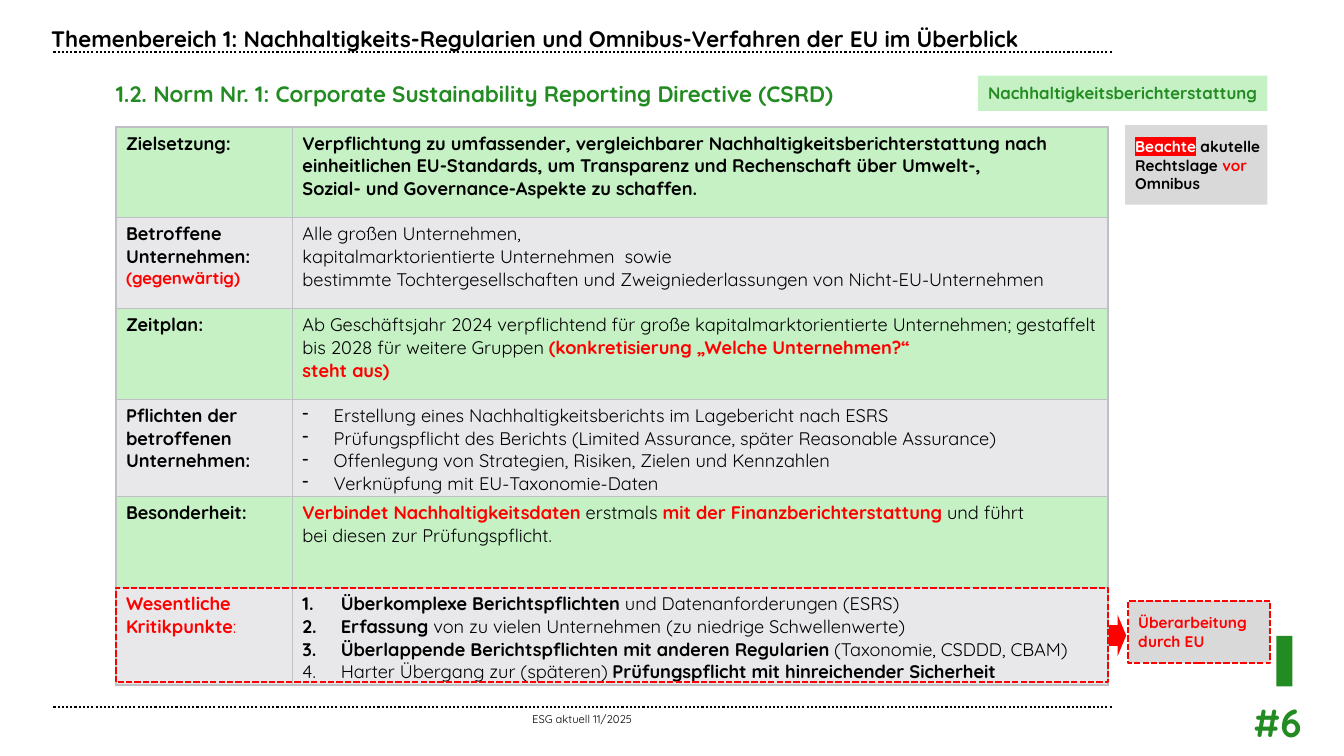
from copy import deepcopy

from lxml import etree
from pptx import Presentation
from pptx import util as u
from pptx.dml.color import RGBColor
from pptx.enum import dml, shapes, text
from pptx.oxml import ns

FONT = "Quicksand"
BLACK, WHITE, RED, GREEN = "000000", "FFFFFF", "FF0000", "228B22"
MINT, PALE, GREY, BORDER = "C5F1C5", "E8E8EA", "D9D9D9", "BFC0C5"
DOTTED, DASHED = dml.MSO_LINE.ROUND_DOT, dml.MSO_LINE.SQUARE_DOT
MIDDLE, LEFT = text.MSO_ANCHOR.MIDDLE, text.PP_ALIGN.LEFT
CENTER, RIGHT = text.PP_ALIGN.CENTER, text.PP_ALIGN.RIGHT


def rgb(value):
    return RGBColor.from_string(value)


def child(parent, tag, **attributes):
    return etree.SubElement(parent, ns.qn(tag), **attributes)


def plain(words, color=BLACK, **style):
    return words, dict(color=color, **style)


def bold(words, color=BLACK, **style):
    return words, dict(color=color, bold=True, **style)


class SlideBuilder:
    def __init__(self, page):
        self.page = page

    def add_span(self, para, words, size, color, bold=False, highlight=None):
        for index, line in enumerate(words.split("\n")):
            if index:
                para.add_line_break()
                para._p[-1].append(deepcopy(span._r.rPr))
            if not line:
                continue
            span = para.add_run()
            span.text = line
            span.font.name = FONT
            span.font.size = u.Pt(size)
            span.font.bold = bold
            span.font.color.rgb = rgb(color)
            if highlight:
                mark = etree.Element(ns.qn("a:highlight"))
                child(mark, "a:srgbClr", val=highlight)
                span._r.rPr.find(ns.qn("a:solidFill")).addnext(mark)

    def add_paragraphs(self, frame, paragraphs, size, align=LEFT, bullet=None, indent=0):
        frame.word_wrap = True
        for index, spans in enumerate(paragraphs):
            para = frame.add_paragraph() if index else frame.paragraphs[0]
            para.alignment = align
            if bullet:
                properties = para._p.get_or_add_pPr()
                properties.set("marL", str(u.Inches(indent)))
                properties.set("indent", str(u.Inches(-indent)))
                if bullet == "-":
                    child(properties, "a:buChar", char=bullet)
                else:
                    child(properties, "a:buAutoNum", type=bullet)
            for words, style in spans:
                self.add_span(para, words, **{"size": size, **style})

    def fit_frame(self, frame, anchor, insets):
        frame.vertical_anchor = anchor
        left, top, right, bottom = map(u.Inches, insets)
        frame.margin_left, frame.margin_top = left, top
        frame.margin_right, frame.margin_bottom = right, bottom

    def label(self, place, spans, size, align=LEFT,
              anchor=text.MSO_ANCHOR.TOP, insets=(0.1, 0.05, 0.1, 0.05)):
        box = self.page.shapes.add_textbox(*map(u.Inches, place))
        self.fit_frame(box.text_frame, anchor, insets)
        self.add_paragraphs(box.text_frame, [spans], size, align)

    def shape(self, place, fill=None, line=None, spans=(), size=11, align=LEFT,
              kind=shapes.MSO_SHAPE.RECTANGLE, insets=(0.1, 0.05, 0.1, 0.05)):
        box = self.page.shapes.add_shape(kind, *map(u.Inches, place))
        box.shadow.inherit = False
        if fill:
            box.fill.solid()
            box.fill.fore_color.rgb = rgb(fill)
        else:
            box.fill.background()
        if line:
            self.stroke(box.line, line, DASHED)
        else:
            box.line.fill.background()
        if spans:
            self.fit_frame(box.text_frame, MIDDLE, insets)
            self.add_paragraphs(box.text_frame, [spans], size, align)

    def stroke(self, line, color, dash):
        line.color.rgb = rgb(color)
        line.width = u.Pt(1.5)
        line.dash_style = dash

    def rule(self, left, right, top):
        ends = map(u.Inches, (left, top, right, top))
        rule = self.page.shapes.add_connector(shapes.MSO_CONNECTOR.STRAIGHT, *ends)
        self.stroke(rule.line, BLACK, DOTTED)
        child(rule._element.spPr, "a:effectLst")

    def cell(self, cell, fill, paragraphs, **layout):
        cell.fill.solid()
        cell.fill.fore_color.rgb = rgb(fill)
        for index, side in enumerate(("a:lnL", "a:lnR", "a:lnT", "a:lnB")):
            edge = etree.Element(ns.qn(side), w=str(u.Pt(1)))
            child(child(edge, "a:solidFill"), "a:srgbClr", val=BORDER)
            cell._tc.get_or_add_tcPr().insert(index, edge)
        self.add_paragraphs(cell.text_frame, paragraphs, 13, **layout)

    def table(self, place, widths, rows):
        grid = self.page.shapes.add_table(
            len(rows), len(widths), *map(u.Inches, place)).table
        grid.first_row = grid.horz_banding = False
        for column, width in zip(grid.columns, widths):
            column.width = u.Inches(width)
        for index, (heading, paragraphs, layout) in enumerate(rows):
            grid.rows[index].height = u.Inches(0.9)
            fill = PALE if index % 2 else MINT
            self.cell(grid.cell(index, 0), fill, [heading])
            self.cell(grid.cell(index, 1), fill, paragraphs, **layout)


ROWS = [
    ([bold("Zielsetzung:")],
     [[bold("Verpflichtung zu umfassender, vergleichbarer Nachhaltigkeitsberichterstattung "
            "nach einheitlichen EU-Standards, um Transparenz und Rechenschaft über Umwelt-, \n"
            "Sozial- und Governance-Aspekte zu schaffen.")]], {}),
    ([bold("Betroffene Unternehmen:\n"), bold("(gegenwärtig)", RED, size=12)],
     [[plain("Alle großen Unternehmen,")],
      [plain("kapitalmarktorientierte Unternehmen  sowie")],
      [plain("bestimmte Tochtergesellschaften und Zweigniederlassungen "
             "von Nicht-EU-Unternehmen")]], {}),
    ([bold("Zeitplan:")],
     [[plain("Ab Geschäftsjahr 2024 verpflichtend für große kapitalmarktorientierte "
             "Unternehmen; gestaffelt bis 2028 für weitere Gruppen"),
       bold(" (konkretisierung „Welche Unternehmen?“ \nsteht aus)", RED)]], {}),
    ([bold("Pflichten der betroffenen Unternehmen:")],
     [[plain("Erstellung eines Nachhaltigkeitsberichts im Lagebericht nach ESRS")],
      [plain("Prüfungspflicht des Berichts (Limited Assurance, später Reasonable Assurance)")],
      [plain("Offenlegung von Strategien, Risiken, Zielen und Kennzahlen")],
      [plain("Verknüpfung mit EU-Taxonomie-Daten")]],
     dict(bullet="-", indent=0.31)),
    ([bold("Besonderheit:")],
     [[bold("Verbindet Nachhaltigkeitsdaten ", RED), plain("erstmals "),
       bold("mit der Finanzberichterstattung ", RED),
       plain("und führt \nbei diesen zur Prüfungspflicht.")]], {}),
    ([bold("Wesentliche \nKritikpunkte", RED), plain(":", RED)],
     [[bold("Überkomplexe Berichtspflichten "), plain("und Datenanforderungen (ESRS)")],
      [bold("Erfassung "), plain("von zu vielen Unternehmen (zu niedrige Schwellenwerte)")],
      [bold("Überlappende Berichtspflichten mit anderen Regularien "),
       plain("(Taxonomie, CSDDD, CBAM)")],
      [plain("Harter Übergang zur (späteren) "),
       bold("Prüfungspflicht mit hinreichender Sicherheit")]],
     dict(bullet="arabicPeriod", indent=0.38)),
]


def main():
    deck = Presentation()
    deck.slide_width, deck.slide_height = u.Inches(13.33), u.Inches(7.5)
    slide = SlideBuilder(deck.slides.add_slide(deck.slide_layouts[6]))

    for top in (0.52, 7.01):
        slide.rule(0.53, 11.04, top)
    slide.label((11.39, 6.88, 1.62, 0.57), [bold("#6", GREEN)], 28, RIGHT)
    slide.label((0.52, 7.07, 10.51, 0.13), [plain("ESG aktuell 11/2025")], 8,
                CENTER, MIDDLE, (0, 0, 0, 0))
    slide.shape((12.66, 6.31, 0.16, 0.5), GREEN)
    slide.label((1.15, 0.79, 8.4, 0.35),
                [bold("1.2. Norm Nr. 1: Corporate Sustainability Reporting Directive (CSRD)",
                      GREEN)], 16, insets=(0, 0, 0, 0))
    slide.label((0.41, 0.2, 10.95, 0.37),
                [bold("Themenbereich 1: Nachhaltigkeits-Regularien und "
                      "Omnibus-Verfahren der EU im Überblick")], 16)

    slide.table((1.15, 1.26, 9.84, 5.4), (1.75, 8.09), ROWS)

    slide.shape((9.7, 0.75, 2.87, 0.35), MINT, size=12, align=CENTER,
                spans=[bold("Nachhaltigkeitsberichterstattung", GREEN)])
    slide.shape((11.16, 1.24, 1.41, 0.79), GREY, insets=(0.1, 0.05, 0, 0.05),
                spans=[bold("Beachte", WHITE, highlight=RED), bold(" akutelle Rechtslage "),
                       bold("vor", RED), bold(" Omnibus")])
    slide.shape((1.15, 5.83, 9.84, 0.94), line=RED)
    slide.shape((11, 6.1, 0.17, 0.41), RED, kind=shapes.MSO_SHAPE.RIGHT_ARROW)
    slide.shape((11.19, 5.96, 1.41, 0.62), GREY, RED,
                [bold("Überarbeitung durch EU", RED)])
    deck.save("out.pptx")


if __name__ == "__main__":
    main()
